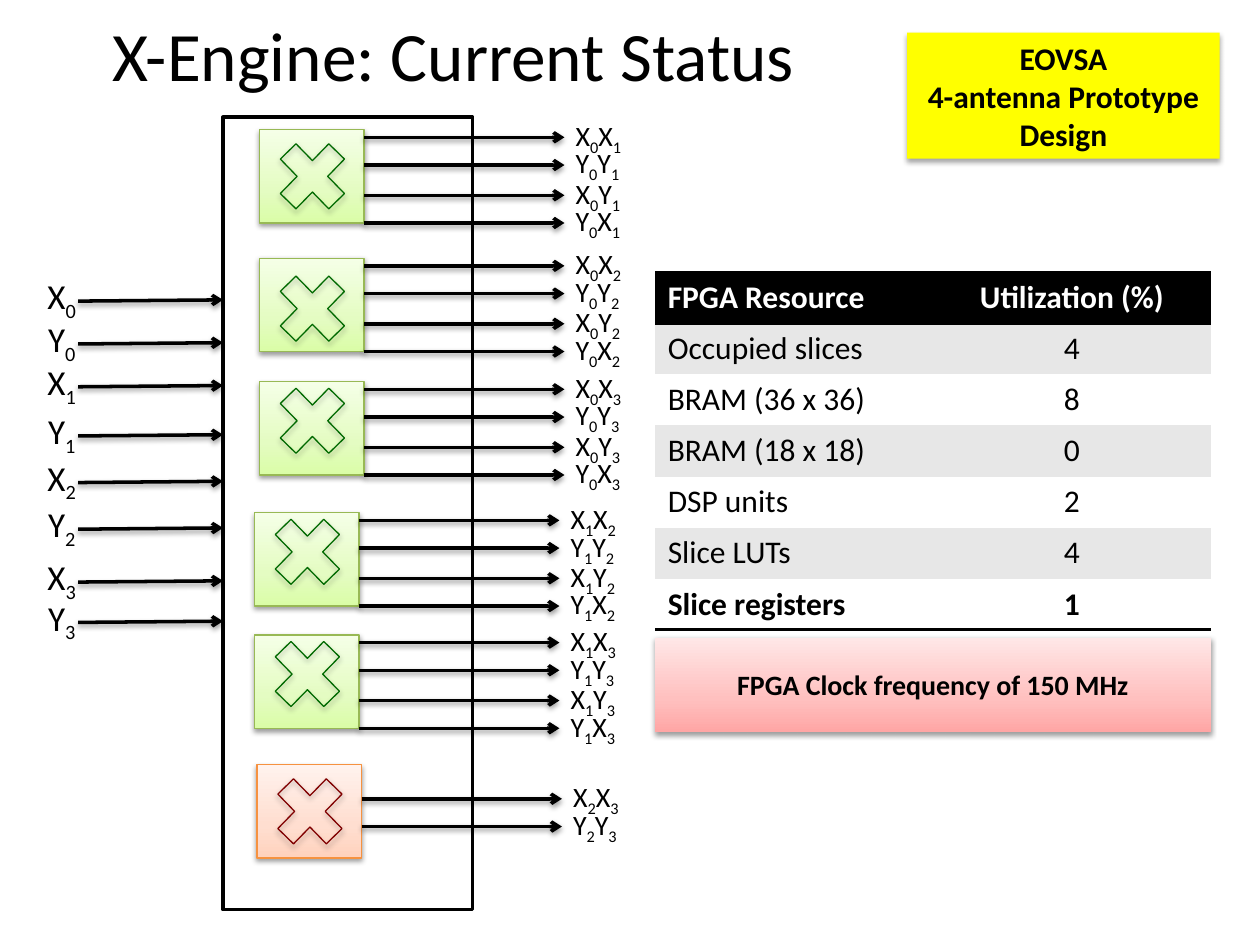
from dataclasses import dataclass

from pptx import Presentation, util as u
from pptx.dml.color import RGBColor
from pptx.enum import shapes, text
from pptx.oxml import parse_xml
from pptx.oxml.ns import nsdecls

NS = nsdecls("a")


@dataclass(frozen=True)
class Theme:
    font: str = "Calibri"
    ink: str = "000000"
    paper: str = "FFFFFF"
    band: str = "E7E7E7"
    note: str = "FFFF00"
    green: tuple = ("DAFDA7", "E4FCC2", "F5FFE7")
    green_line: str = "98B955"
    green_mark: str = "006900"
    orange: tuple = ("FFD2BD", "FFDED0", "FFF2ED")
    orange_line: str = "F69240"
    orange_mark: str = "800000"
    pink: tuple = ("FFA6A5", "FFC0BF", "FFE7E7")
    title: float = 39.6
    input: int = 20
    body: int = 18
    output: int = 16
    rule: int = 2
    thin: float = 0.75


class Deck:
    """Holds the theme and the slide being drawn."""

    def __init__(self, theme, slide):
        self.theme, self.slide = theme, slide

    def place(self, *lengths):
        return [u.Inches(length) for length in lengths]

    def run(self, paragraph, words, size, color=None, bold=False, subscript=False):
        run = paragraph.add_run()
        run.text = words
        run.font.name, run.font.size, run.font.bold = self.theme.font, u.Pt(size), bold
        run.font.color.rgb = RGBColor.from_string(color or self.theme.ink)
        if subscript:
            run.font._element.set("baseline", "-25000")

    def shadow(self, item, alpha=38, distance=1.6):
        props = item._element.spPr
        for old in props.findall("{*}effectLst"):
            props.remove(old)
        props.append(parse_xml(
            f'<a:effectLst {NS}><a:outerShdw blurRad="{u.Pt(3.1)}" dist="{u.Pt(distance)}" '
            f'dir="5400000" rotWithShape="0"><a:srgbClr val="{self.theme.ink}">'
            f'<a:alpha val="{alpha * 1000}"/></a:srgbClr></a:outerShdw></a:effectLst>'))

    def title(self, words, *at):
        heading = self.slide.shapes.title
        heading.left, heading.top, heading.width, heading.height = self.place(*at)
        heading.text_frame.vertical_anchor = text.MSO_ANCHOR.MIDDLE
        paragraph = heading.text_frame.paragraphs[0]
        paragraph.alignment = text.PP_ALIGN.CENTER
        self.run(paragraph, words, self.theme.title)

    def block(self, at, kind=shapes.MSO_SHAPE.RECTANGLE, fill=None, line=None,
              width=0.75, lines=(), size=18):
        """A preset shape; a tuple as fill gives a gradient from the bottom up."""
        block = self.slide.shapes.add_shape(kind, *self.place(*at))
        block.shadow.inherit = False
        if isinstance(fill, tuple):
            stops = "".join(f'<a:gs pos="{pos}"><a:srgbClr val="{color}"/></a:gs>'
                            for pos, color in zip((0, 35000, 100000), fill))
            block._element.spPr.insert(2, parse_xml(
                f'<a:gradFill {NS} rotWithShape="1"><a:gsLst>{stops}</a:gsLst>'
                '<a:lin ang="16200000" scaled="0"/></a:gradFill>'))
        elif fill:
            block.fill.solid()
            block.fill.fore_color.rgb = RGBColor.from_string(fill)
        else:
            block.fill.background()
        if line:
            block.line.color.rgb = RGBColor.from_string(line)
            block.line.width = u.Pt(width)
        else:
            block.line.fill.background()
        frame = block.text_frame
        for i, words in enumerate(lines):
            paragraph = frame.add_paragraph() if i else frame.paragraphs[0]
            paragraph.alignment = text.PP_ALIGN.CENTER
            self.run(paragraph, words, size, bold=True)
        return block

    def arrow(self, *ends):
        arrow = self.slide.shapes.add_connector(
            shapes.MSO_CONNECTOR.STRAIGHT, *self.place(*ends))
        arrow.line.color.rgb = RGBColor.from_string(self.theme.ink)
        arrow.line.width = u.Pt(self.theme.rule)
        arrow.line._ln.append(parse_xml(f'<a:tailEnd {NS} type="arrow"/>'))
        self.shadow(arrow)

    def signal(self, at, parts, size, centred=False):
        """A label of letters that each carry a subscript."""
        frame = self.slide.shapes.add_textbox(*self.place(*at)).text_frame
        frame.word_wrap = False
        frame.auto_size = text.MSO_AUTO_SIZE.SHAPE_TO_FIT_TEXT
        paragraph = frame.paragraphs[0]
        if centred:
            frame.vertical_anchor = text.MSO_ANCHOR.MIDDLE
            paragraph.alignment = text.PP_ALIGN.CENTER
        for letter, antenna in parts:
            self.run(paragraph, letter, size)
            self.run(paragraph, str(antenna), size, subscript=True)

    def border(self, cell, *sides):
        for side in sides:
            cell._tc.get_or_add_tcPr().append(parse_xml(
                f'<a:{side} {NS} w="{u.Pt(self.theme.rule)}"><a:solidFill>'
                f'<a:srgbClr val="{self.theme.ink}"/></a:solidFill></a:{side}>'))

    def table(self, rows, *at):
        t = self.theme
        table = self.slide.shapes.add_table(len(rows), len(rows[0]), *self.place(*at)).table
        # The plain style draws no grid of its own
        table._tbl.tblPr.find("{*}tableStyleId").text = "{2D5ABB26-0587-4C30-8999-92F81FD0307C}"
        last = len(rows) - 1
        for r, row in enumerate(rows):
            for c, words in enumerate(row):
                cell = table.cell(r, c)
                if r == 0:
                    self.border(cell, "lnT", "lnB")
                elif r == last:
                    self.border(cell, "lnB")
                fill = t.ink if r == 0 else t.band if r % 2 else t.paper
                cell.fill.solid()
                cell.fill.fore_color.rgb = RGBColor.from_string(fill)
                cell.vertical_anchor = text.MSO_ANCHOR.MIDDLE
                paragraph = cell.text_frame.paragraphs[0]
                paragraph.alignment = text.PP_ALIGN.CENTER if c else text.PP_ALIGN.LEFT
                self.run(paragraph, words, t.body, t.ink if r else t.paper, r in (0, last))

    def multiplier(self, left, top, mark_shift, antennas, offsets, last=False):
        """A multiplier box with its cross and its labelled products."""
        t = self.theme
        fill, line, mark = ((t.orange, t.orange_line, t.orange_mark) if last
                            else (t.green, t.green_line, t.green_mark))
        self.shadow(self.block((left, top, 0.83, 0.74), fill=fill, line=line, width=t.thin))
        cross = self.block((left + 0.05, top + mark_shift, 0.74, 0.76),
                           shapes.MSO_SHAPE.MATH_MULTIPLY, line=mark, width=t.thin)
        self.shadow(cross, 35, 1.8)
        for offset, letters in zip(offsets, ("XX", "YY", "XY", "YX")):
            y = top + offset
            self.arrow(left + 0.83, y, left + 2.42, y)
            self.signal((left + 2.41, y - 0.2, 0.59, 0.37), zip(letters, antennas), t.output)


def main():
    deck_file = Presentation()
    deck_file.slide_width, deck_file.slide_height = u.Inches(10), u.Inches(7.5)
    t = Theme()
    deck = Deck(t, deck_file.slides.add_slide(deck_file.slide_layouts[5]))
    deck.title("X-Engine: Current Status", 0.5, 0.07, 6.2, 0.72)

    # Engine outline and its antenna inputs
    deck.block((1.77, 0.93, 1.98, 6.29), fill=t.paper, line=t.ink, width=t.rule)
    for i, y in enumerate((2.39, 2.73, 3.07, 3.46, 3.83, 4.2, 4.62, 4.94)):
        deck.arrow(0.62, y, 1.77, y - 0.01)
        deck.signal((0.27, y - 0.24, 0.44, 0.44), [("XY"[i % 2], i // 2)], t.input, True)

    # Multipliers, one for each antenna pair
    four = (0.06, 0.28, 0.52, 0.74)
    for left, top, mark_shift, antennas in (
            (2.06, 1.03, -0.01, (0, 1)), (2.06, 2.05, 0.02, (0, 2)),
            (2.06, 3.03, -0.07, (0, 3)), (2.02, 4.07, -0.07, (1, 2)),
            (2.02, 5.04, -0.07, (1, 3))):
        deck.multiplier(left, top, mark_shift, antennas, four)
    deck.multiplier(2.04, 6.07, -0.01, (2, 3), (0.27, 0.49), last=True)

    # Design note, resource table and clock rate
    design = deck.block((7.2, 0.26, 2.48, 1), fill=t.note, size=t.body,
                        lines=("EOVSA", "4-antenna Prototype Design"))
    deck.shadow(design, 35, 1.8)
    deck.table((("FPGA Resource", "Utilization (%)"), ("Occupied slices", "4"),
                ("BRAM (36 x 36)", "8"), ("BRAM (18 x 18)", "0"), ("DSP units", "2"),
                ("Slice LUTs", "4"), ("Slice registers", "1")), 5.2, 2.16, 4.41, 2.84)
    deck.shadow(deck.block((5.2, 5.06, 4.41, 0.75), fill=t.pink, size=t.output,
                           lines=("FPGA Clock frequency of 150 MHz",)))
    deck_file.save("out.pptx")


if __name__ == "__main__":
    main()
